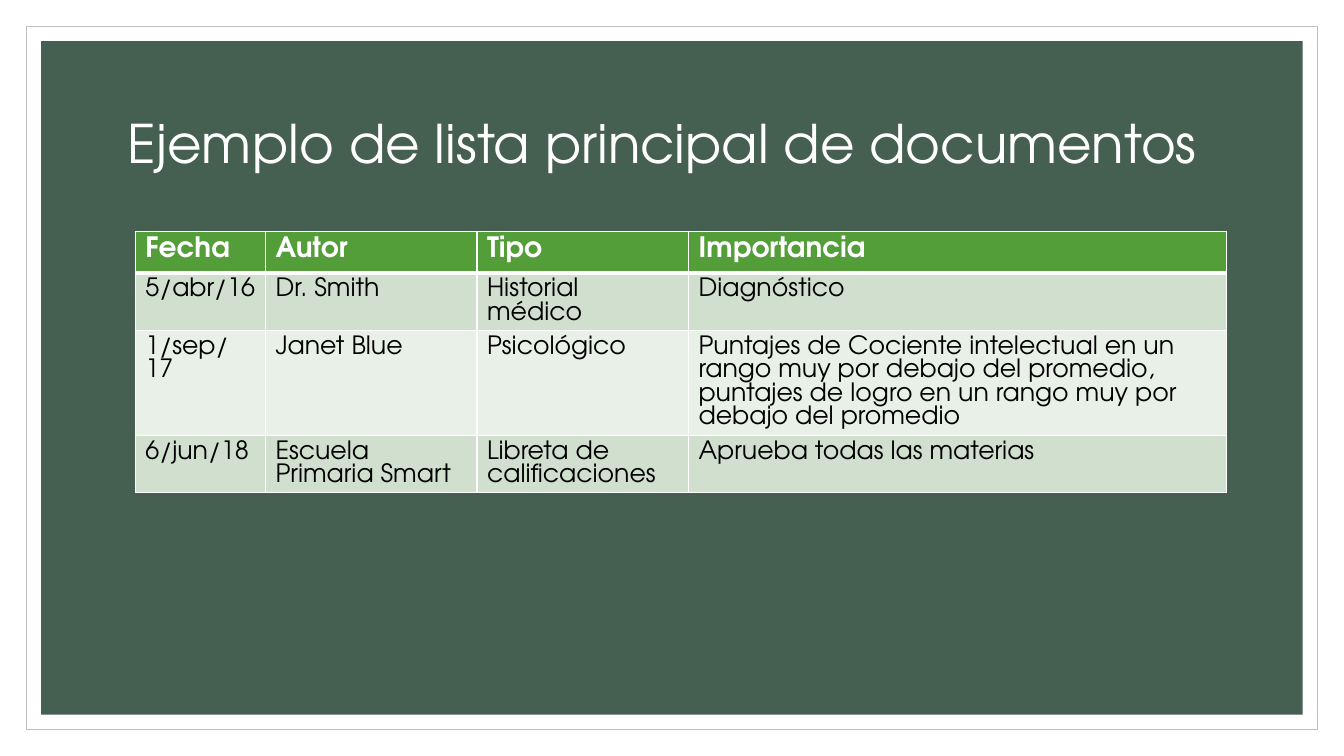
import pptx
import pptx.util
import pptx.dml.color
import pptx.enum.shapes
import pptx.enum.text
import pptx.oxml.ns
import lxml.etree

Cm = pptx.util.Cm
Pt = pptx.util.Pt
RGBColor = pptx.dml.color.RGBColor

WHITE = RGBColor(0xFF, 0xFF, 0xFF)
BLACK = RGBColor(0x00, 0x00, 0x00)
GREY = RGBColor(0xBF, 0xBF, 0xBF)
PINE = RGBColor(0x45, 0x5F, 0x51)
GREEN = RGBColor(0x54, 0x9E, 0x39)
SAGE = RGBColor(0xD1, 0xDF, 0xCE)
MIST = RGBColor(0xE9, 0xF0, 0xE8)
FONT = "TeX Gyre Adventor"

WIDE, HIGH = 33.87, 19.05
COLS = [3.28, 5.33, 5.33, 13.56]
TALL = [1.04, 1.45, 2.64, 1.45]
ROWS = [
    ["Fecha", "Autor", "Tipo", "Importancia"],
    ["5/abr/16", "Dr. Smith", "Historial médico", "Diagnóstico"],
    ["1/sep/17", "Janet Blue", "Psicológico",
     "Puntajes de Cociente intelectual en un rango muy por debajo del "
     "promedio, puntajes de logro en un rango muy por debajo del promedio"],
    ["6/jun/18", "Escuela Primaria Smart", "Libreta de calificaciones",
     "Aprueba todas las materias"],
]


def set_font(para, size, color, bold=False):
    para.font.name = FONT
    para.font.size = Pt(size)
    para.font.bold = bold
    para.font.color.rgb = color


def add_panel(slide, inset, fill, line=None):
    panel = slide.shapes.add_shape(
        pptx.enum.shapes.MSO_SHAPE.RECTANGLE, Cm(inset), Cm(inset),
        Cm(WIDE - 2 * inset), Cm(HIGH - 2 * inset))
    panel.shadow.inherit = False
    panel.fill.solid()
    panel.fill.fore_color.rgb = fill
    if line is None:
        panel.line.fill.background()
    else:
        panel.line.color.rgb = line
        panel.line.width = Pt(0.5)
    return panel


def add_frame(slide):
    add_panel(slide, 0.66, WHITE, GREY)
    return add_panel(slide, 1.04, PINE)


def set_title(slide, text, box, back):
    title = slide.shapes.title
    title.left, title.top, title.width, title.height = map(Cm, box)
    back.element.addnext(title.element)
    frame = title.text_frame
    frame.text = text
    frame.word_wrap = True
    frame.auto_size = pptx.enum.text.MSO_AUTO_SIZE.NONE
    frame.vertical_anchor = pptx.enum.text.MSO_ANCHOR.MIDDLE
    para = frame.paragraphs[0]
    para.alignment = pptx.enum.text.PP_ALIGN.LEFT
    para.line_spacing = 0.9
    set_font(para, 38, WHITE)


def add_edge(cell, side, width):
    qn = pptx.oxml.ns.qn
    props = cell._tc.get_or_add_tcPr()
    edge = lxml.etree.SubElement(props, qn("a:" + side), w=str(Pt(width)))
    fill = lxml.etree.SubElement(edge, qn("a:solidFill"))
    lxml.etree.SubElement(fill, qn("a:srgbClr"), val=str(WHITE))


def fill_cell(cell, text, row):
    head = row == 0
    edges = {"lnL": 1, "lnR": 1, "lnT": 3 if row == 1 else 1,
             "lnB": 3 if head else 1}
    for side, width in edges.items():
        add_edge(cell, side, width)
    cell.fill.solid()
    cell.fill.fore_color.rgb = GREEN if head else SAGE if row % 2 else MIST
    cell.text = text
    para = cell.text_frame.paragraphs[0]
    set_font(para, 20 if head else 18, WHITE if head else BLACK, head)


def add_list(slide, left, top):
    table = slide.shapes.add_table(
        len(ROWS), len(COLS), Cm(left), Cm(top),
        Cm(sum(COLS)), Cm(sum(TALL))).table
    for col, width in zip(table.columns, COLS):
        col.width = Cm(width)
    for row, height in zip(table.rows, TALL):
        row.height = Cm(height)
    for r, texts in enumerate(ROWS):
        for c, text in enumerate(texts):
            fill_cell(table.cell(r, c), text, r)


def main():
    deck = pptx.Presentation()
    deck.slide_width, deck.slide_height = Cm(WIDE), Cm(HIGH)
    slide = deck.slides.add_slide(deck.slide_layouts[5])
    back = add_frame(slide)
    set_title(slide, "Ejemplo de lista principal de documentos",
              (2.97, 1.78, 27.94, 3.81), back)
    add_list(slide, 3.41, 5.84)
    deck.save("out.pptx")


if __name__ == "__main__":
    main()
